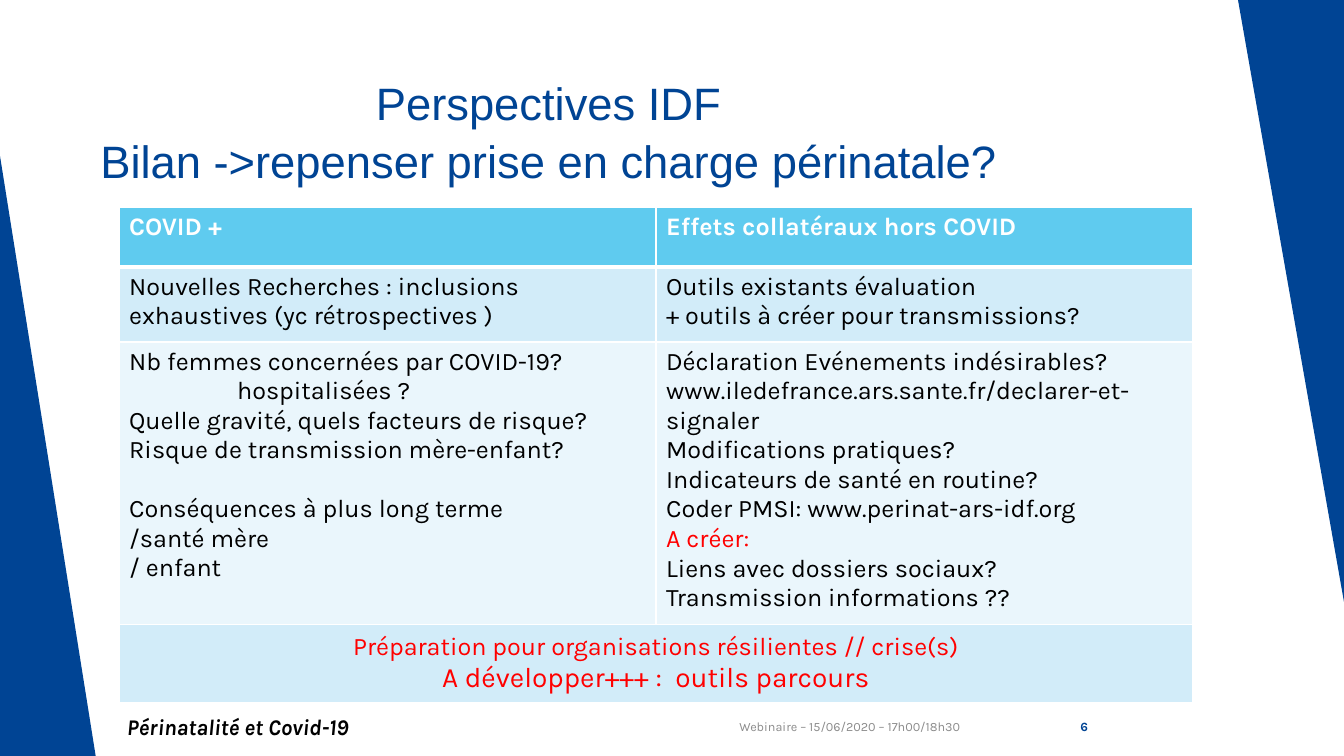
import dataclasses

import pptx
import pptx.dml.color
import pptx.enum.shapes
import pptx.enum.text
import pptx.oxml
import pptx.oxml.ns
import pptx.util

ALIGN = pptx.enum.text.PP_ALIGN
ANCHOR = pptx.enum.text.MSO_ANCHOR


@dataclasses.dataclass(frozen=True)
class Theme:
    navy: str = "004494"
    cyan: str = "5FCBEF"
    band: str = "D2ECF9"
    pale: str = "EAF6FC"
    white: str = "FFFFFF"
    black: str = "000000"
    red: str = "FF0000"
    grey: str = "8C8C8C"
    heading: str = "Arial"
    text: str = "Karla"
    title: float = 32.4
    large: int = 20
    body: int = 18
    footer: int = 16
    small: int = 9


T = Theme()


@dataclasses.dataclass
class Para:
    text: str
    color: str = T.black
    size: float = T.body
    font: str = T.text
    bold: bool = False
    italic: bool = False
    align: ALIGN = ALIGN.LEFT
    before: int = 0
    spacing: float = 1.0
    indent: int = 0


HEADER = [
    [Para("COVID +", T.white, bold=True)],
    [Para("Effets collatéraux hors COVID", T.white, bold=True)],
]
TOOLS = [
    [Para("Nouvelles Recherches : inclusions exhaustives (yc rétrospectives )")],
    [Para("Outils existants évaluation"), Para("+ outils à créer pour transmissions?")],
]
QUESTIONS = [
    [
        Para("Nb femmes concernées par COVID-19?"),
        Para("hospitalisées ?", indent=108),
        Para("Quelle gravité, quels facteurs de risque?"),
        Para("Risque de transmission mère-enfant?"),
        Para("Conséquences à plus long terme", before=21),
        Para("/santé mère"),
        Para("/ enfant"),
    ],
    [
        Para("Déclaration Evénements indésirables?"),
        Para("www.iledefrance.ars.sante.fr/declarer-et-signaler"),
        Para("Modifications pratiques?"),
        Para("Indicateurs de santé en routine?"),
        Para("Coder PMSI: www.perinat-ars-idf.org"),
        Para("A créer:", T.red),
        Para("Liens avec dossiers sociaux?"),
        Para("Transmission informations ??"),
    ],
]
CONCLUSION = [[
    Para("Préparation pour organisations résilientes // crise(s)", T.red, align=ALIGN.CENTER),
    Para("A développer+++ :  outils parcours", T.red, T.large, align=ALIGN.CENTER),
]]
ROWS = [
    (60, T.cyan, HEADER),
    (75, T.band, TOOLS),
    (276, T.pale, QUESTIONS),
    (78, T.band, CONCLUSION),
]


def px(n):
    return pptx.util.Emu(round(n * 914400 / 100.8))


def rgb(color):
    return pptx.dml.color.RGBColor.from_string(color)


def write(tf, paras):
    for i, para in enumerate(paras):
        p = tf.paragraphs[0] if i == 0 else tf.add_paragraph()
        p.text = para.text
        p.alignment = para.align
        p.line_spacing = para.spacing
        if para.before:
            p.space_before = pptx.util.Pt(para.before)
        if para.indent:
            p._p.get_or_add_pPr().set("marL", str(px(para.indent)))
        f = p.font
        f.name, f.size = para.font, pptx.util.Pt(para.size)
        f.bold, f.italic = para.bold, para.italic
        f.color.rgb = rgb(para.color)


def add_text(slide, box, para, anchor=ANCHOR.MIDDLE):
    tf = slide.shapes.add_textbox(*map(px, box)).text_frame
    tf.word_wrap = True
    tf.vertical_anchor = anchor
    write(tf, [para])


def add_corner(slide, box, rotation):
    sp = slide.shapes.add_shape(
        pptx.enum.shapes.MSO_SHAPE.RIGHT_TRIANGLE, *map(px, box))
    sp.rotation = rotation
    sp.shadow.inherit = False
    sp.fill.solid()
    sp.fill.fore_color.rgb = rgb(T.navy)
    sp.line.fill.background()


def set_borders(cell, top, bottom):
    tcPr = cell._tc.get_or_add_tcPr()
    for side, points in zip("LRTB", (1, 1, top, bottom)):
        tcPr.append(pptx.oxml.parse_xml(
            f'<a:ln{side} {pptx.oxml.ns.nsdecls("a")} w="{pptx.util.Pt(points)}">'
            f'<a:solidFill><a:srgbClr val="{T.white}"/></a:solidFill></a:ln{side}>'))


def add_table(slide, left, top, widths, rows):
    height = sum(h for h, _, _ in rows)
    table = slide.shapes.add_table(
        len(rows), len(widths), px(left), px(top), px(sum(widths)), px(height)).table
    for column, width in zip(table.columns, widths):
        column.width = px(width)
    for r, (height, fill, contents) in enumerate(rows):
        table.rows[r].height = px(height)
        for c in range(len(widths)):
            cell = table.cell(r, c)
            set_borders(cell, 3 if r == 1 else 1, 3 if r == 0 else 1)
            cell.fill.solid()
            cell.fill.fore_color.rgb = rgb(fill)
        for c, paras in enumerate(contents):
            write(table.cell(r, c).text_frame, paras)
        if len(contents) < len(widths):
            table.cell(r, 0).merge(table.cell(r, len(widths) - 1))
            table.cell(r, 0).vertical_anchor = ANCHOR.MIDDLE


def main():
    prs = pptx.Presentation()
    prs.slide_width, prs.slide_height = px(1344), px(756)
    slide = prs.slides.add_slide(prs.slide_layouts[6])
    add_corner(slide, (0, 156, 96, 602), 0)
    add_corner(slide, (1238, 0, 106, 602), 180)
    add_text(slide, (75, 68, 947, 145), Para(
        "Perspectives IDF\vBilan ->repenser prise en charge périnatale?",
        T.navy, T.title, T.heading, align=ALIGN.CENTER, spacing=1.05), ANCHOR.TOP)
    add_text(slide, (708, 707, 262, 40), Para(
        "Webinaire – 15/06/2020 – 17h00/18h30", T.grey, T.small, align=ALIGN.RIGHT))
    add_text(slide, (117, 707, 539, 40), Para(
        "Périnatalité et Covid-19", size=T.footer, bold=True, italic=True))
    add_text(slide, (1022, 707, 76, 40), Para(
        "6", T.navy, T.small, bold=True, align=ALIGN.RIGHT))
    add_table(slide, 119, 207, (537, 537), ROWS)
    prs.save("out.pptx")


if __name__ == "__main__":
    main()
